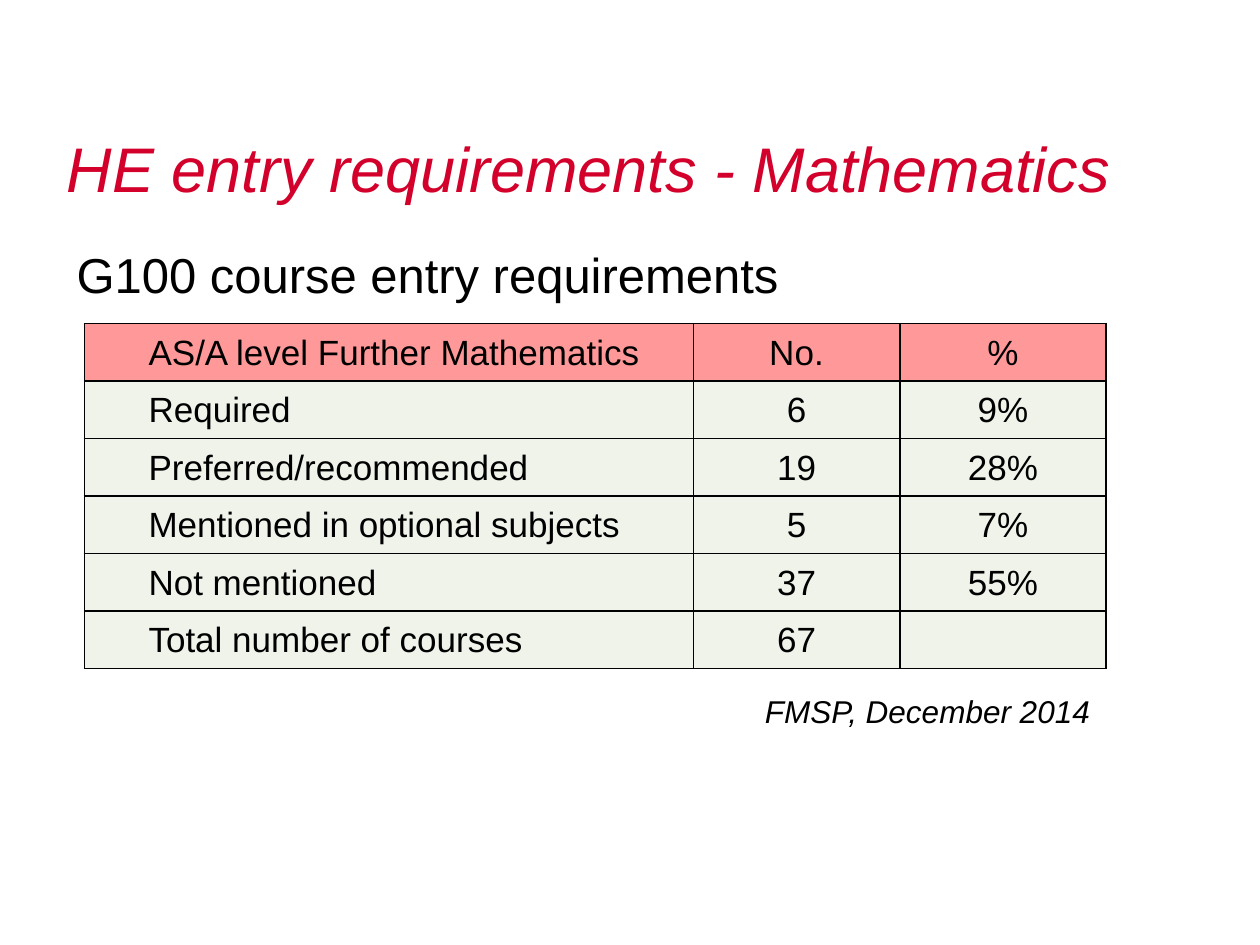
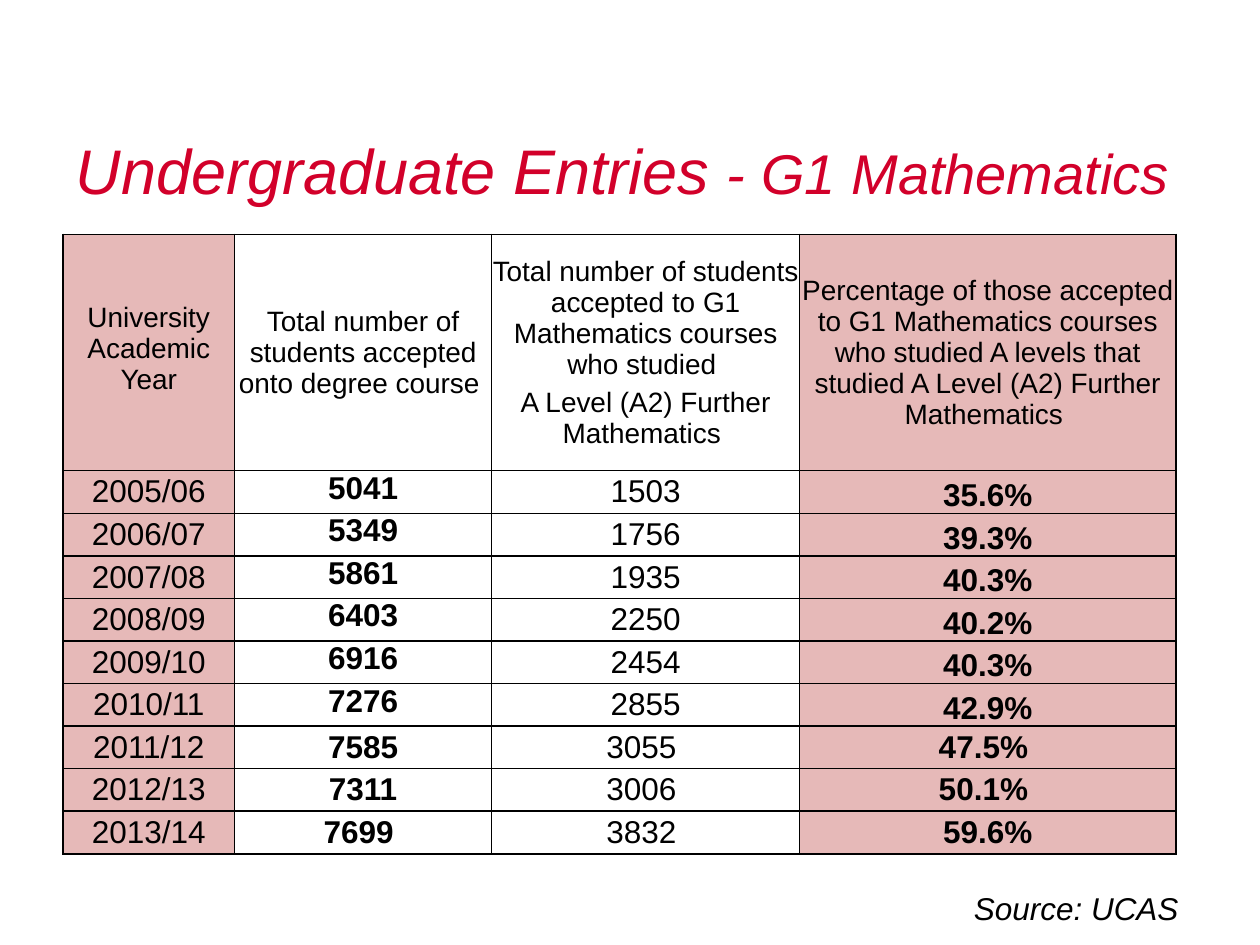
from lxml import etree
from pptx import Presentation
from pptx.dml.color import RGBColor
from pptx.enum import text
from pptx.oxml import ns
from pptx.util import Pt

RED = RGBColor(0xD2, 0x00, 0x2A)
BLACK = RGBColor(0x00, 0x00, 0x00)
WHITE = RGBColor(0xFF, 0xFF, 0xFF)
CORAL = RGBColor(0xFF, 0x99, 0x99)
SAGE = RGBColor(0xEF, 0xF3, 0xEA)
ROSE = RGBColor(0xE6, 0xB9, 0xB8)
LEFT, MID = text.PP_ALIGN.LEFT, text.PP_ALIGN.CENTER
TOP = text.MSO_ANCHOR.TOP
CENTRE = text.MSO_ANCHOR.MIDDLE
BASE = text.MSO_ANCHOR.BOTTOM


class Deck:
    face = "Arial"

    def __init__(self):
        self.show = Presentation()
        self.show.slide_width, self.show.slide_height = Pt(720), Pt(540)
        self.slide = None

    def style(self, font, size, color=BLACK, bold=False, slant=False):
        font.name, font.size, font.bold, font.italic = self.face, Pt(size), bold, slant
        font.color.rgb = color

    def page(self, box, *parts):
        self.slide = self.show.slides.add_slide(self.show.slide_layouts[5])
        title = self.slide.shapes.title
        title.left, title.top, title.width, title.height = map(Pt, box)
        frame = title.text_frame
        frame.auto_size = text.MSO_AUTO_SIZE.NONE
        frame.vertical_anchor, frame.margin_top = TOP, Pt(8)
        para = frame.paragraphs[0]
        para.alignment = LEFT
        for words, size in parts:
            run = para.add_run()
            run.text = words
            self.style(run.font, size, RED, slant=True)

    def label(self, box, words, size, slant=False, wrap=False, inset=3.6):
        frame = self.slide.shapes.add_textbox(*map(Pt, box)).text_frame
        frame.word_wrap, frame.margin_top = wrap, Pt(inset)
        frame.text = words
        self.style(frame.paragraphs[0].runs[0].font, size, slant=slant)

    def grid(self, spot, widths, heights, rows, paint):
        shape = self.slide.shapes.add_table(
            len(rows), len(widths), *map(Pt, (*spot, sum(widths), sum(heights))))
        table = shape.table
        table.first_row = table.horz_banding = False
        for col, width in zip(table.columns, widths):
            col.width = Pt(width)
        for y, (row, height) in enumerate(zip(rows, heights)):
            table.rows[y].height = Pt(height)
            for x, words in enumerate(row):
                cell = table.cell(y, x)
                cell.text = words
                paint(cell, y, x)
                self.edge(cell)

    def cell(self, cell, fill, size, bold=False, align=MID, anchor=CENTRE, inset=0):
        cell.fill.solid()
        cell.fill.fore_color.rgb = fill
        cell.vertical_anchor = anchor
        cell.margin_left = cell.margin_right = cell.margin_top = Pt(inset)
        cell.margin_bottom = 0
        for para in cell.text_frame.paragraphs:
            para.alignment = align
            self.style(para.font, size, bold=bold)
            for run in para.runs:
                self.style(run.font, size, bold=bold)

    def edge(self, cell):
        props = cell._tc.get_or_add_tcPr()
        for spot, side in enumerate(("lnL", "lnR", "lnT", "lnB")):
            line = etree.Element(ns.qn("a:" + side), w=str(Pt(1)))
            fill = etree.SubElement(line, ns.qn("a:solidFill"))
            etree.SubElement(fill, ns.qn("a:srgbClr"), val=str(BLACK))
            props.insert(spot, line)


def entry(deck):
    deck.page((31, 66.2, 648, 57), ("HE entry requirements - Mathematics", 36))
    deck.label((36.7, 134, 648, 345.6), "G100 course entry requirements", 28,
               wrap=True, inset=6)
    rows = [
        ("AS/A level Further Mathematics", "No.", "%"),
        ("Required", "6", "9%"),
        ("Preferred/recommended", "19", "28%"),
        ("Mentioned in optional subjects", "5", "7%"),
        ("Not mentioned", "37", "55%"),
        ("Total number of courses", "67", ""),
    ]

    def paint(cell, y, x):
        deck.cell(cell, SAGE if y else CORAL, 20, align=MID if x else LEFT, inset=0.7)
        if x == 0:
            para = cell.text_frame.paragraphs[0]
            para.level = 1
            props = para._p.get_or_add_pPr()
            props.set("marL", str(Pt(36)))
            props.set("indent", "0")

    deck.grid((48.2, 185), (348, 118, 118), [32.88] * len(rows), rows, paint)
    deck.label((430, 391.7, 202.3, 29), "FMSP, December 2014", 18, slant=True)


def intake(deck):
    deck.page((36, 67, 648, 90), ("Undergraduate Entries ", 36), ("- G1 Mathematics", 32))
    rows = [
        ("University Academic Year",
         "Total number of students accepted onto degree course ",
         "Total number of students accepted to G1 Mathematics courses who studied \n"
         "A Level (A2) Further Mathematics ",
         "Percentage of those accepted to G1 Mathematics courses who studied "
         "A levels that studied A Level (A2) Further Mathematics "),
        ("2005/06", "5041", "1503", "35.6%"),
        ("2006/07", "5349", "1756", "39.3%"),
        ("2007/08", "5861", "1935", "40.3%"),
        ("2008/09", "6403", "2250", "40.2%"),
        ("2009/10", "6916", "2454", "40.3%"),
        ("2010/11", "7276", "2855", "42.9%"),
        ("2011/12", "7585", "3055 ", "47.5% "),
        ("2012/13", "7311", "3006 ", "50.1% "),
        ("2013/14", "7699 ", "3832 ", "59.6%"),
    ]
    early = (CENTRE, TOP, CENTRE, BASE)

    def paint(cell, y, x):
        fill = ROSE if x in (0, 3) else WHITE
        anchor = early[x] if 1 <= y <= 6 else CENTRE
        deck.cell(cell, fill, 18 if y else 16, bold=y > 0 and x in (1, 3), anchor=anchor)
        if y == 0:
            cell.text_frame.paragraphs[0].space_after = Pt(4)
            if x == 0:
                cell.margin_bottom = Pt(4)

    heights = [135] + [24.33] * (len(rows) - 1)
    deck.grid((36, 134), (98, 147, 176, 215), heights, rows, paint)
    deck.label((549.4, 504.7, 132.5, 29), "Source: UCAS", 18, slant=True)


def main():
    deck = Deck()
    entry(deck)
    intake(deck)
    deck.show.save("out.pptx")


if __name__ == "__main__":
    main()
